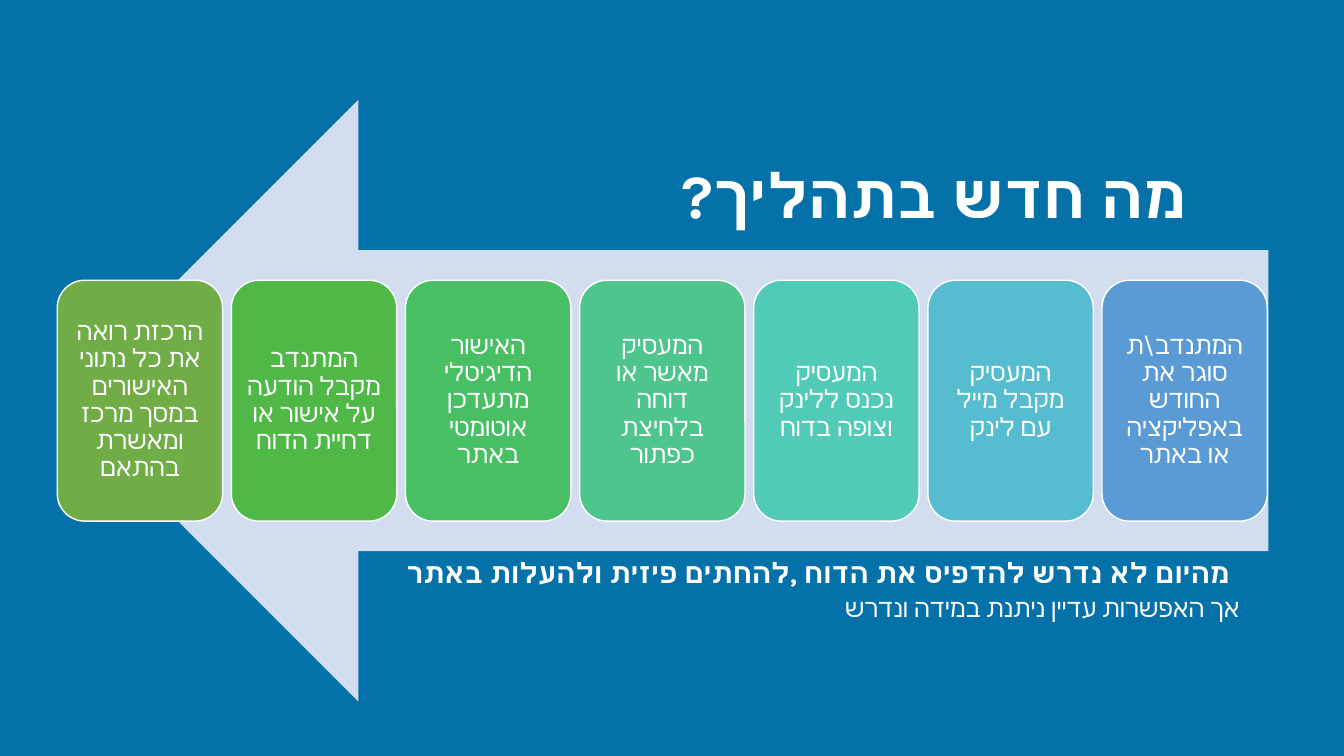
"""Build a right-to-left process slide: seven steps over a left arrow."""
from lxml.etree import SubElement
from pptx import Presentation
from pptx.dml.color import RGBColor
from pptx.enum.shapes import MSO_SHAPE
from pptx.enum.text import MSO_ANCHOR, PP_ALIGN
from pptx.oxml.ns import qn
from pptx.util import Inches, Pt

FONT = "Karla"
WHITE = "FFFFFF"
STEPS = [
    (r"המתנדב\ת סוגר את החודש באפליקציה או באתר", "5B9BD5"),
    ("המעסיק מקבל מייל עם לינק", "56BCD0"),
    ("המעסיק נכנס ללינק וצופה בדוח", "52CAB8"),
    ("המעסיק מאשר או דוחה בלחיצת כפתור", "4DC58D"),
    ("האישור הדיגיטלי מתעדכן אוטומטי באתר", "49BF64"),
    ("המתנדב מקבל הודעה על אישור או דחיית הדוח", "50B846"),
    ("הרכזת רואה את כל נתוני האישורים במסך מרכז ומאשרת בהתאם", "70AD47"),
]
FIRST_STEP_LEFT = 10.93
STEP_PITCH = 1.727


def color(hex_code):
    """Turn a hex string into a colour."""
    return RGBColor.from_string(hex_code)


def write_text(shape, text, size, bold=False, line_spacing=1.0, wrap=False):
    """Write one centred right-to-left paragraph in white."""
    frame = shape.text_frame
    frame.word_wrap = wrap
    frame.text = text
    paragraph = frame.paragraphs[0]
    paragraph.alignment = PP_ALIGN.CENTER
    paragraph.line_spacing = line_spacing
    paragraph.space_before = Pt(0)
    font = paragraph.font
    font.name = FONT
    font.size = Pt(size)
    font.bold = bold
    font.color.rgb = color(WHITE)
    properties = paragraph._p.get_or_add_pPr()
    properties.set("rtl", "1")
    SubElement(properties.find(qn("a:defRPr")), qn("a:cs"), typeface=FONT)


def add_filled_shape(slide, kind, box, fill):
    """Add a preset shape with a plain fill and no outline or shadow."""
    shape = slide.shapes.add_shape(kind, *map(Inches, box))
    shape.shadow.inherit = False
    shape.fill.solid()
    shape.fill.fore_color.rgb = color(fill)
    shape.line.fill.background()
    return shape


def add_step(slide, left, text, fill):
    """Add one rounded process step."""
    step = add_filled_shape(
        slide, MSO_SHAPE.ROUNDED_RECTANGLE, (left, 2.78, 1.64, 2.39), fill
    )
    step.line.color.rgb = color(WHITE)
    step.line.width = Pt(1)
    frame = step.text_frame
    frame.margin_left = frame.margin_right = Inches(0.07)
    frame.margin_top = frame.margin_bottom = Inches(0.07)
    frame.vertical_anchor = MSO_ANCHOR.MIDDLE
    write_text(step, text, 18, line_spacing=0.9, wrap=True)


def add_note(slide, box, text, size, bold=False):
    """Add a single-line note."""
    note = slide.shapes.add_textbox(*map(Inches, box))
    write_text(note, text, size, bold)


def place_title(slide, box, text):
    """Move and format the title placeholder."""
    title = slide.shapes.title
    title.left, title.top, title.width, title.height = map(Inches, box)
    title.text_frame.vertical_anchor = MSO_ANCHOR.TOP
    write_text(title, text, 44, bold=True)


def main():
    """Build and save the slide."""
    presentation = Presentation()
    presentation.slide_width = Inches(13.33)
    presentation.slide_height = Inches(7.5)
    slide = presentation.slides.add_slide(presentation.slide_layouts[5])
    slide.background.fill.solid()
    slide.background.fill.fore_color.rgb = color("0471A8")

    add_filled_shape(slide, MSO_SHAPE.LEFT_ARROW, (0.57, 0.99, 12.01, 5.97), "D2DEEF")
    for index, (text, fill) in enumerate(STEPS):
        add_step(slide, FIRST_STEP_LEFT - index * STEP_PITCH, text, fill)

    place_title(slide, (6.42, 1.51, 5.69, 0.84), "מה חדש בתהליך?")
    add_note(
        slide,
        (3.55, 5.46, 9.13, 0.44),
        "מהיום לא נדרש להדפיס את הדוח ,להחתים פיזית ולהעלות באתר",
        20,
        bold=True,
    )
    add_note(slide, (8.04, 5.83, 4.6, 0.4), "אך האפשרות עדיין ניתנת במידה ונדרש", 18)
    presentation.save("out.pptx")


if __name__ == "__main__":
    main()
